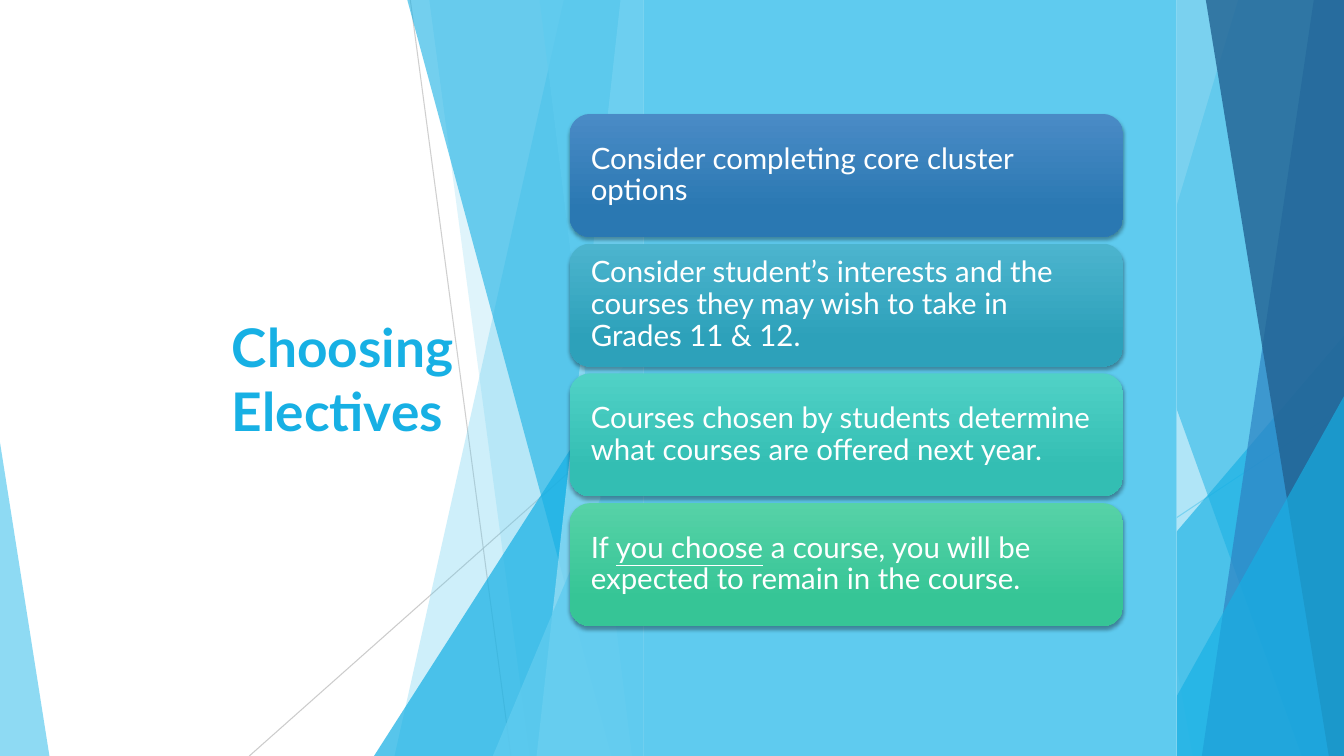
from lxml import etree
from pptx import Presentation
from pptx.dml.color import RGBColor
from pptx.enum.shapes import MSO_CONNECTOR, MSO_SHAPE
from pptx.enum.text import MSO_ANCHOR, MSO_AUTO_SIZE, PP_ALIGN
from pptx.oxml.ns import qn
from pptx.util import Inches, Pt

STRAIGHT = MSO_CONNECTOR.STRAIGHT
RECTANGLE = MSO_SHAPE.RECTANGLE
ROUNDED = MSO_SHAPE.ROUNDED_RECTANGLE
TRIANGLE = MSO_SHAPE.ISOSCELES_TRIANGLE
MIDDLE = MSO_ANCHOR.MIDDLE
LEFT = PP_ALIGN.LEFT
NO_FIT = MSO_AUTO_SIZE.NONE

FONT = "Lato"
WIDTH, HEIGHT = 13.33, 7.5
COLORS = {
    "white": "FFFFFF", "black": "000000", "gray": "BFBFBF",
    "sky": "5FCBEF", "pale": "9FE0F5", "cyan": "17B0E4",
    "blue": "2E83C3", "navy": "226292",
}

TITLE = "Choosing Electives"
CARDS = [
    (["Consider completing core cluster options"], "4A8BC6", "2A78B2"),
    (["Consider student’s interests and the courses they may wish to take in Grades 11 & 12."],
     "4CB4CE", "2DA1BA"),
    (["Courses chosen by students determine what courses are offered next year."],
     "50D1C6", "33BEB3"),
    (["If ", "you choose", " a course, you will be expected to remain in the course."],
     "56D2A7", "36C596"),
]
UNDERLINED = "you choose"

# Distances run leftwards from the right edge of each fan.
FAN_LINES = [((3.08, 0), (1.75, HEIGHT)), ((0, 4.03), (5.21, HEIGHT))]
FAN_FACETS = [
    ("band", 1.05, 3.29), ("band", 2.83, 1.5), ("triangle", 3.56, 3.33),
    ("band", 3.12, 0.42), ("band", 0.3, 1.41), ("band", 1.37, 0.15),
    ("triangle", 1.99, 3.93),
]
EDGE_FAN = {
    "right": WIDTH, "scale": 1, "lines": [("sky", 70), ("sky", 70)],
    "fills": [("sky", 36), ("sky", 20), ("cyan", 66), ("cyan", 50),
              ("blue", 70), ("navy", 80), ("cyan", 66)],
}
MIDDLE_FAN = {
    "right": 6.38, "scale": 0.75, "lines": [("gray", 75), ("gray", 80)],
    "fills": [("sky", 30), ("sky", 20), ("cyan", 72), ("cyan", 60),
              ("pale", 70), ("sky", 65), ("sky", 80)],
}
CARD_LEFT, CARD_TOP, CARD_WIDTH, CARD_HEIGHT, CARD_STEP = 5.65, 1.13, 5.49, 1.22, 1.287


def rgb(name):
    return RGBColor.from_string(COLORS.get(name, name))


def set_alpha(element, percent):
    color = next(element.iter(qn("a:srgbClr")))
    etree.SubElement(color, qn("a:alpha"), val=str(percent * 1000))


def paint(shape, name, alpha=100):
    shape.shadow.inherit = False
    shape.fill.solid()
    shape.fill.fore_color.rgb = rgb(name)
    shape.line.fill.background()
    if alpha < 100:
        set_alpha(shape.element.spPr, alpha)
    return shape


def add_block(page, kind, left, top, width, height):
    return page.shapes.add_shape(kind, Inches(left), Inches(top), Inches(width), Inches(height))


def add_triangle(page, left, top, width, apex):
    shape = add_block(page, TRIANGLE, left, top, width, HEIGHT - top)
    shape.adjustments[0] = apex
    return shape


def add_band(page, top_x, bottom_x, right):
    corners = [(right, 0), (right, HEIGHT), (bottom_x, HEIGHT)]
    builder = page.shapes.build_freeform(Inches(top_x), 0)
    builder.add_line_segments([(Inches(x), Inches(y)) for x, y in corners])
    return builder.convert_to_shape()


def add_fan(page, fan):
    right, scale = fan["right"], fan["scale"]
    for (start, end), (name, alpha) in zip(FAN_LINES, fan["lines"]):
        line = page.shapes.add_connector(
            STRAIGHT, Inches(right - start[0] * scale), Inches(start[1]),
            Inches(right - end[0] * scale), Inches(end[1]))
        line.line.width = Pt(0.75)
        line.line.color.rgb = rgb(name)
        set_alpha(line.element.spPr, alpha)
        etree.SubElement(line.element.spPr, qn("a:effectLst"))
    for (kind, first, second), (name, alpha) in zip(FAN_FACETS, fan["fills"]):
        left = right - first * scale
        if kind == "band":
            facet = add_band(page, left, right - second * scale, right)
        else:
            facet = add_triangle(page, left, second, first * scale, 1)
        paint(facet, name, alpha)


def style(span, size, name, bold=False):
    span.font.name = FONT
    span.font.size = Pt(size)
    span.font.bold = bold
    span.font.color.rgb = rgb(name)


def add_title(page):
    title = page.shapes.title
    title.left, title.top = Inches(2.2), Inches(1.51)
    title.width, title.height = Inches(2.91), Inches(4.48)
    frame = title.text_frame
    frame.text = TITLE
    frame.word_wrap = True
    frame.auto_size = NO_FIT
    frame.vertical_anchor = MIDDLE
    frame.paragraphs[0].alignment = LEFT
    style(frame.paragraphs[0].runs[0], 38, "cyan", True)
    return title


def add_card(page, index, texts, top_color, bottom_color):
    card = add_block(page, ROUNDED, CARD_LEFT, CARD_TOP + index * CARD_STEP,
                     CARD_WIDTH, CARD_HEIGHT)
    card.line.fill.background()
    card.fill.gradient()
    card.fill.gradient_angle = 270
    stops = zip(card.fill.gradient_stops, [0, 0.78], [top_color, bottom_color])
    for stop, position, color in stops:
        stop.position = position
        stop.color.rgb = rgb(color)

    card.shadow.inherit = False
    effects = card.element.spPr.find(qn("a:effectLst"))
    shadow = etree.SubElement(effects, qn("a:outerShdw"), blurRad=str(Pt(3)),
                              dist=str(Pt(2)), dir="5400000", rotWithShape="0")
    etree.SubElement(shadow, qn("a:srgbClr"), val=COLORS["black"])
    set_alpha(shadow, 35)

    frame = card.text_frame
    frame.word_wrap = True
    frame.vertical_anchor = MIDDLE
    frame.margin_left = frame.margin_right = Inches(0.15)
    para = frame.paragraphs[0]
    para.alignment = LEFT
    para.line_spacing = 0.9
    for text in texts:
        span = para.add_run()
        span.text = text
        style(span, 21, "white")
        if text == UNDERLINED:
            span.font.underline = True


def main():
    deck = Presentation()
    deck.slide_width, deck.slide_height = Inches(WIDTH), Inches(HEIGHT)
    page = deck.slides.add_slide(deck.slide_layouts[5])

    add_fan(page, EDGE_FAN)
    paint(add_triangle(page, 0, 4.39, 0.49, 0), "sky", 70)
    paint(add_block(page, RECTANGLE, 1.67, 0, 10, HEIGHT), "white")
    add_fan(page, MIDDLE_FAN)
    panel = paint(add_block(page, RECTANGLE, 6.38, 0, 5.29, HEIGHT), "sky")
    panel.element.addprevious(add_title(page).element)
    for index, card in enumerate(CARDS):
        add_card(page, index, *card)

    deck.save("out.pptx")


if __name__ == "__main__":
    main()
